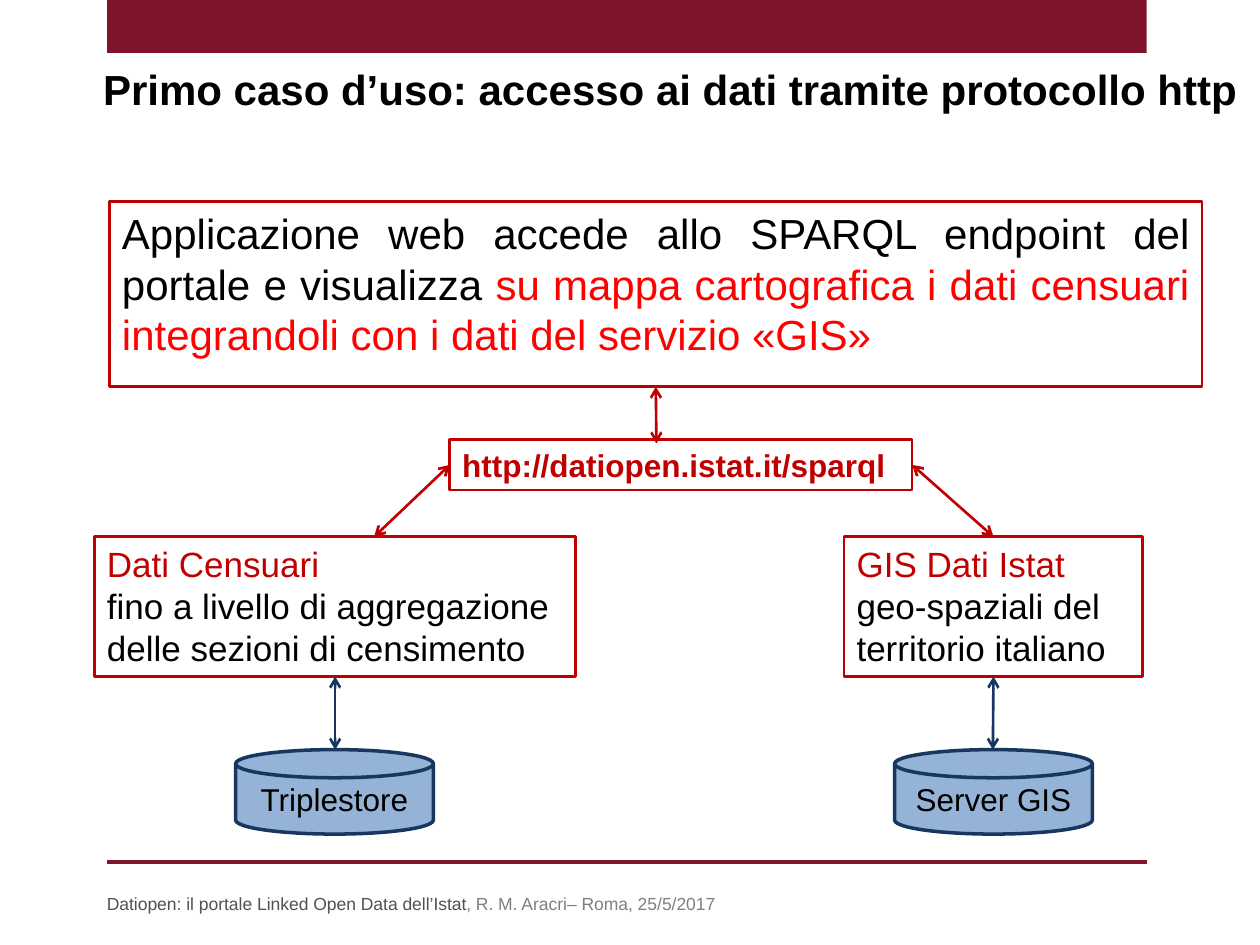
"""Build the slide on the first use case: data access over http."""
import pptx
import pptx.util
import pptx.dml.color
import pptx.enum.shapes
import pptx.enum.text
import pptx.oxml.ns
from lxml import etree
from pptx.util import Inches

SHAPE = pptx.enum.shapes.MSO_SHAPE
ALIGN = pptx.enum.text.PP_ALIGN
ANCHOR = pptx.enum.text.MSO_ANCHOR


class Theme:
    """Colours, type sizes and line widths."""
    font = "Arial"
    wine, red, hot = "7F142A", "C00000", "FF0000"
    navy, sky, black = "17375E", "95B3D7", "000000"
    dark, grey = "505150", "7F7F7F"
    head, text, label, small = 24, 20, 18, 10
    thin, thick = 1.5, 2


def rgb(code):
    """Turn a hex code into a colour."""
    return pptx.dml.color.RGBColor.from_string(code)


def write(shape, *paras, size, bold=False, align=ALIGN.LEFT,
          anchor=ANCHOR.TOP, margin=0, indent=0):
    """Fill a shape with paragraphs, each a list of (text, colour) runs."""
    frame = shape.text_frame
    frame.word_wrap = True
    frame.vertical_anchor = anchor
    for num, runs in enumerate(paras):
        para = frame.add_paragraph() if num else frame.paragraphs[0]
        para.alignment = align
        if margin:
            props = para._p.get_or_add_pPr()
            props.set("marL", str(Inches(margin)))
            props.set("indent", str(Inches(indent)))
        for text, color in runs:
            run = para.add_run()
            run.text = text
            run.font.name = Theme.font
            run.font.size = pptx.util.Pt(size)
            run.font.bold = bold
            run.font.color.rgb = rgb(color)


def block(slide, kind, area, fill=None, line=None, width=Theme.thin):
    """Add a preset shape with plain fill and outline."""
    shape = slide.shapes.add_shape(kind, *map(Inches, area))
    shape.shadow.inherit = False
    if fill:
        shape.fill.solid()
        shape.fill.fore_color.rgb = rgb(fill)
    else:
        shape.fill.background()
    if line:
        shape.line.color.rgb = rgb(line)
        shape.line.width = pptx.util.Pt(width)
    else:
        shape.line.fill.background()
    return shape


def panel(slide, area, *paras, **style):
    """Add a red-framed box of text."""
    shape = block(slide, SHAPE.RECTANGLE, area, line=Theme.red)
    write(shape, *paras, **style)
    return shape


def label(slide, area, *paras, **style):
    """Add a bare text box."""
    write(slide.shapes.add_textbox(*map(Inches, area)), *paras, **style)


def store(slide, left, name):
    """Add a named data store."""
    disk = block(slide, SHAPE.FLOWCHART_MAGNETIC_DISK, (left, 5.95, 1.57, 0.67),
                 Theme.sky, Theme.navy, Theme.thick)
    write(disk, [(name, Theme.black)], size=Theme.label,
          align=ALIGN.CENTER, anchor=ANCHOR.MIDDLE)


def rule(slide, start, end, color, width=Theme.thin):
    """Add a straight line."""
    line = slide.shapes.add_connector(
        pptx.enum.shapes.MSO_CONNECTOR.STRAIGHT, *map(Inches, start + end))
    line.line.color.rgb = rgb(color)
    line.line.width = pptx.util.Pt(width)
    etree.SubElement(line._element.spPr, pptx.oxml.ns.qn("a:effectLst"))
    return line


def arrow(slide, start, end, color, first=None, last=None):
    """Add a two-headed arrow, joined to (shape, side) pairs if given."""
    line = rule(slide, start, end, color)
    for tag in ("a:headEnd", "a:tailEnd"):
        etree.SubElement(line.line._get_or_add_ln(),
                         pptx.oxml.ns.qn(tag), type="arrow")
    if first:
        line.begin_connect(*first)
    if last:
        line.end_connect(*last)


def main():
    """Compose and save the slide."""
    deck = pptx.Presentation()
    deck.slide_width, deck.slide_height = Inches(10), Inches(7.5)
    slide = deck.slides.add_slide(deck.slide_layouts[6])

    block(slide, SHAPE.RECTANGLE, (0.85, 0, 8.25, 0.42), fill=Theme.wine)
    rule(slide, (0.85, 6.84), (9.1, 6.84), Theme.wine, Theme.thick)
    label(slide, (0.22, 0.41, 9.78, 0.59),
          [("Primo caso d’uso: accesso ai dati tramite protocollo http",
            Theme.black)],
          size=Theme.head, bold=True, align=ALIGN.JUSTIFY,
          anchor=ANCHOR.MIDDLE, margin=0.88, indent=-0.38)

    app = panel(slide, (0.87, 1.6, 8.67, 1.47),
                [("Applicazione web accede allo SPARQL endpoint del portale "
                  "e visualizza", Theme.black),
                 (" su mappa cartografica i dati censuari integrandoli con "
                  "i dati del servizio «GIS» ", Theme.hot)],
                size=Theme.head, align=ALIGN.JUSTIFY)
    census = panel(slide, (0.75, 4.26, 3.82, 1.11),
                   [("Dati Censuari", Theme.red)],
                   [("fino a livello di aggregazione delle sezioni di "
                     "censimento", Theme.black)], size=Theme.text)
    gis = panel(slide, (6.7, 4.26, 2.37, 1.11),
                [("GIS Dati Istat ", Theme.red),
                 ("geo-spaziali del territorio italiano", Theme.black)],
                size=Theme.text)
    link = panel(slide, (3.57, 3.49, 3.67, 0.4),
                 [("http://datiopen.istat.it/sparql", Theme.red)],
                 size=Theme.label, bold=True)
    store(slide, 1.87, "Triplestore")
    store(slide, 7.1, "Server GIS")

    for box, mid in ((census, 2.66), (gis, 7.88)):
        arrow(slide, (mid, 5.37), (mid, 5.95), Theme.navy, first=(box, 2))
    arrow(slide, (2.97, 4.26), (3.57, 3.69), Theme.red, last=(link, 1))
    arrow(slide, (7.24, 3.69), (7.88, 4.26), Theme.red, (link, 3), (gis, 0))
    arrow(slide, (5.21, 3.52), (5.21, 3.07), Theme.red, last=(app, 2))

    label(slide, (0.75, 7.04, 6.1, 0.27),
          [("Datiopen: il portale Linked Open Data dell’Istat", Theme.dark),
           (", R. M. Aracri– Roma, 25/5/2017", Theme.grey)],
          size=Theme.small)
    deck.save("out.pptx")


if __name__ == "__main__":
    main()
